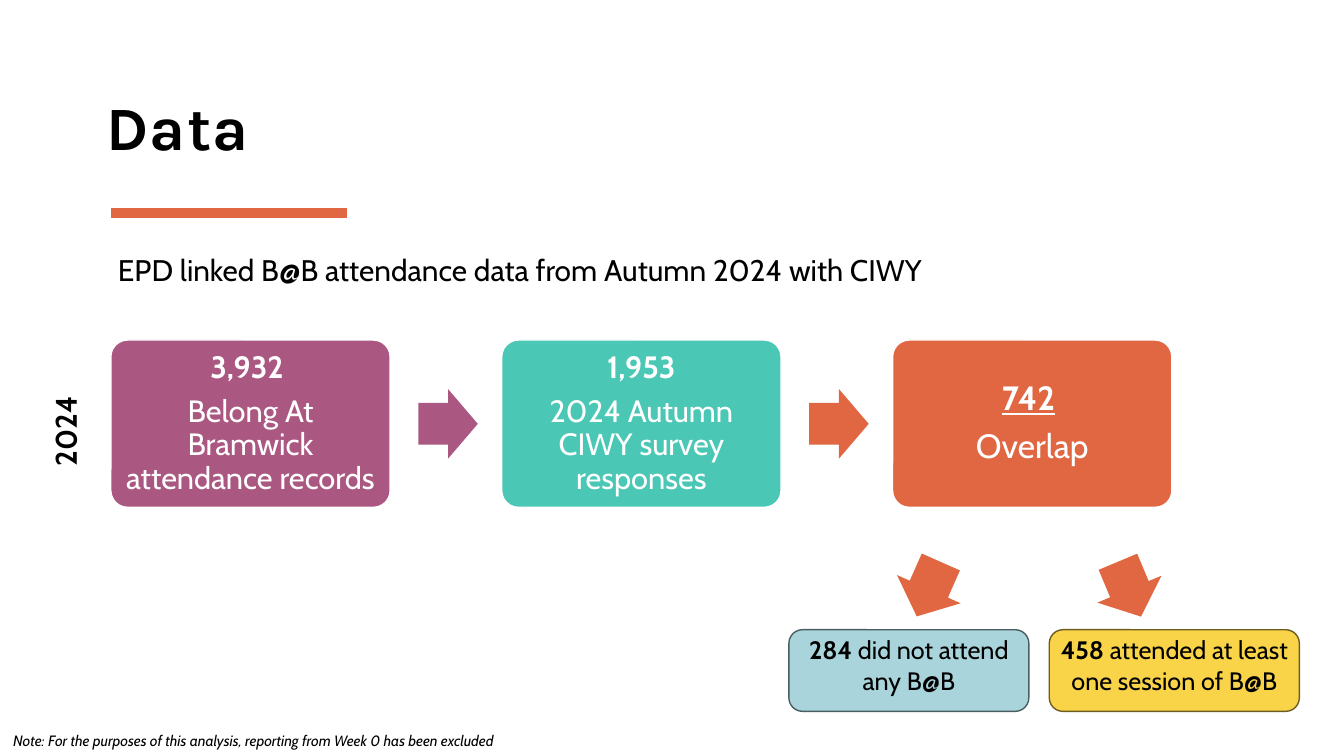
import pptx
import pptx.dml.color
import pptx.enum.shapes
import pptx.enum.text
import pptx.util

Pt = pptx.util.Pt
SHAPES = pptx.enum.shapes.MSO_SHAPE
ANCHOR = pptx.enum.text.MSO_ANCHOR
ALIGN = pptx.enum.text.PP_ALIGN

COLOURS = {
    "black": "000000", "white": "FFFFFF", "orange": "E06742",
    "purple": "AA5881", "teal": "4BC7B6", "blue": "A9D4DB",
    "yellow": "F9D448", "blue edge": "4A5D60", "yellow edge": "6D5D20",
}
CARD_LEFT, CARD_TOP, CARD_STEP = 79.2, 242.9, 279.2
CARD_WIDTH, CARD_HEIGHT = 199.5, 119.5
ARROW_OFFSET, ARROW_TOP = 219.6, 277.9
BOLD = {"bold": True}
PLAIN = {"bold": False}


def rgb(name):
    return pptx.dml.color.RGBColor.from_string(COLOURS[name])


def add_block(slide, kind, box, fill, edge=None):
    shape = slide.shapes.add_shape(kind, *map(Pt, box))
    shape.shadow.inherit = False
    shape.fill.solid()
    shape.fill.fore_color.rgb = rgb(fill)
    if edge:
        shape.line.color.rgb = rgb(edge)
        shape.line.width = Pt(1)
    else:
        shape.line.fill.background()
    return shape


def write(shape, paragraphs, size, colour="black", font="Cabin", insets=(7.2, 3.6),
          anchor=ANCHOR.TOP, layout=None):
    """Fill a shape with paragraphs, each a list of (text, font settings) runs."""
    frame = shape.text_frame
    frame.word_wrap = True
    frame.vertical_anchor = anchor
    across, down = map(Pt, insets)
    frame.margin_left = frame.margin_right = across
    frame.margin_top = frame.margin_bottom = down
    for index, runs in enumerate(paragraphs):
        paragraph = frame.paragraphs[0] if index == 0 else frame.add_paragraph()
        for name, value in (layout or {"alignment": ALIGN.LEFT}).items():
            setattr(paragraph, name, value)
        for text, settings in runs:
            run = paragraph.add_run()
            run.text = text
            run.font.color.rgb = rgb(colour)
            for name, value in {"name": font, "size": Pt(size), **settings}.items():
                setattr(run.font, name, value)


def add_text(slide, box, text, size, settings, **options):
    textbox = slide.shapes.add_textbox(*map(Pt, box))
    write(textbox, [[(text, settings)]], size, **options)
    return textbox


def add_arrow(slide, left, top, colour, rotation=0):
    arrow = add_block(slide, SHAPES.RIGHT_ARROW, (left, top, 42.5, 49.7), colour)
    arrow.adjustments[0] = 0.6
    arrow.adjustments[1] = 0.5
    arrow.rotation = rotation


def add_card(slide, position, colour, paragraphs, size, inset):
    left = CARD_LEFT + position * CARD_STEP
    card = add_block(slide, SHAPES.ROUNDED_RECTANGLE,
                     (left, CARD_TOP, CARD_WIDTH, CARD_HEIGHT), colour, "white")
    card.adjustments[0] = 0.1
    write(card, paragraphs, size, "white", insets=(inset, inset), anchor=ANCHOR.MIDDLE,
          layout={"alignment": ALIGN.CENTER, "line_spacing": 0.9, "space_after": Pt(8)})


def add_result(slide, left, width, colour, count, text):
    result = add_block(slide, SHAPES.ROUNDED_RECTANGLE, (left, 449.8, width, 58.3),
                       colour, f"{colour} edge")
    write(result, [[(count, BOLD), (text, PLAIN)]], 18, insets=(0.75, 0.75),
          layout={"alignment": ALIGN.CENTER})


def main():
    presentation = pptx.Presentation()
    presentation.slide_width, presentation.slide_height = Pt(960), Pt(540)
    slide = presentation.slides.add_slide(presentation.slide_layouts[6])

    title = add_text(slide, (75.9, 69.1, 703.4, 48.2), "Data", 44, BOLD, font="Karla",
                     insets=(0, 0), anchor=ANCHOR.BOTTOM, layout={"line_spacing": 0.9})
    # Letter spacing, in hundredths of a point
    title.text_frame.paragraphs[0].runs[0].font._element.set("spc", "100")
    add_block(slide, SHAPES.RECTANGLE, (78.5, 148, 170, 8.6), "orange", "white")
    add_text(slide, (74.9, 177.8, 760.3, 40),
             "EPD linked B@B attendance data from Autumn 2024 with CIWY", 21.35, PLAIN,
             insets=(9.4, 5), layout={"line_spacing": 0.9, "space_before": Pt(10)})

    year = add_text(slide, (9.4, 286.6, 74.2, 33.1), "2024", 21.35, BOLD)
    year.rotation = 270

    cards = [
        ("purple", [[("3,932 ", BOLD)],
                    [("Belong At Bramwick attendance records", PLAIN)]], 22, 6.6),
        ("teal", [[("1,953", BOLD)],
                  [("2024 Autumn CIWY survey responses", PLAIN)]], 22, 6.6),
        ("orange", [[("742", {"bold": True, "underline": True}), (" ", PLAIN)],
                    [("Overlap", PLAIN)]], 24, 7.2),
    ]
    for position, card in enumerate(cards):
        add_card(slide, position, *card)
    for position, colour in enumerate(("purple", "orange")):
        add_arrow(slide, CARD_LEFT + position * CARD_STEP + ARROW_OFFSET, ARROW_TOP, colour)

    add_arrow(slide, 642.2, 396, "orange", 113.9)
    add_arrow(slide, 785.5, 396, "orange", 67.2)
    add_result(slide, 563.5, 171.4, "blue", "284", " did not attend any B@B")
    add_result(slide, 749.5, 178.6, "yellow", "458", " attended at least one session of B@B")

    add_text(slide, (0, 517.7, 502.6, 22.3),
             "Note: For the purposes of this analysis, reporting from Week 0 has been excluded",
             10.7, {"italic": True}, insets=(9.4, 5))
    presentation.save("out.pptx")


if __name__ == "__main__":
    main()
